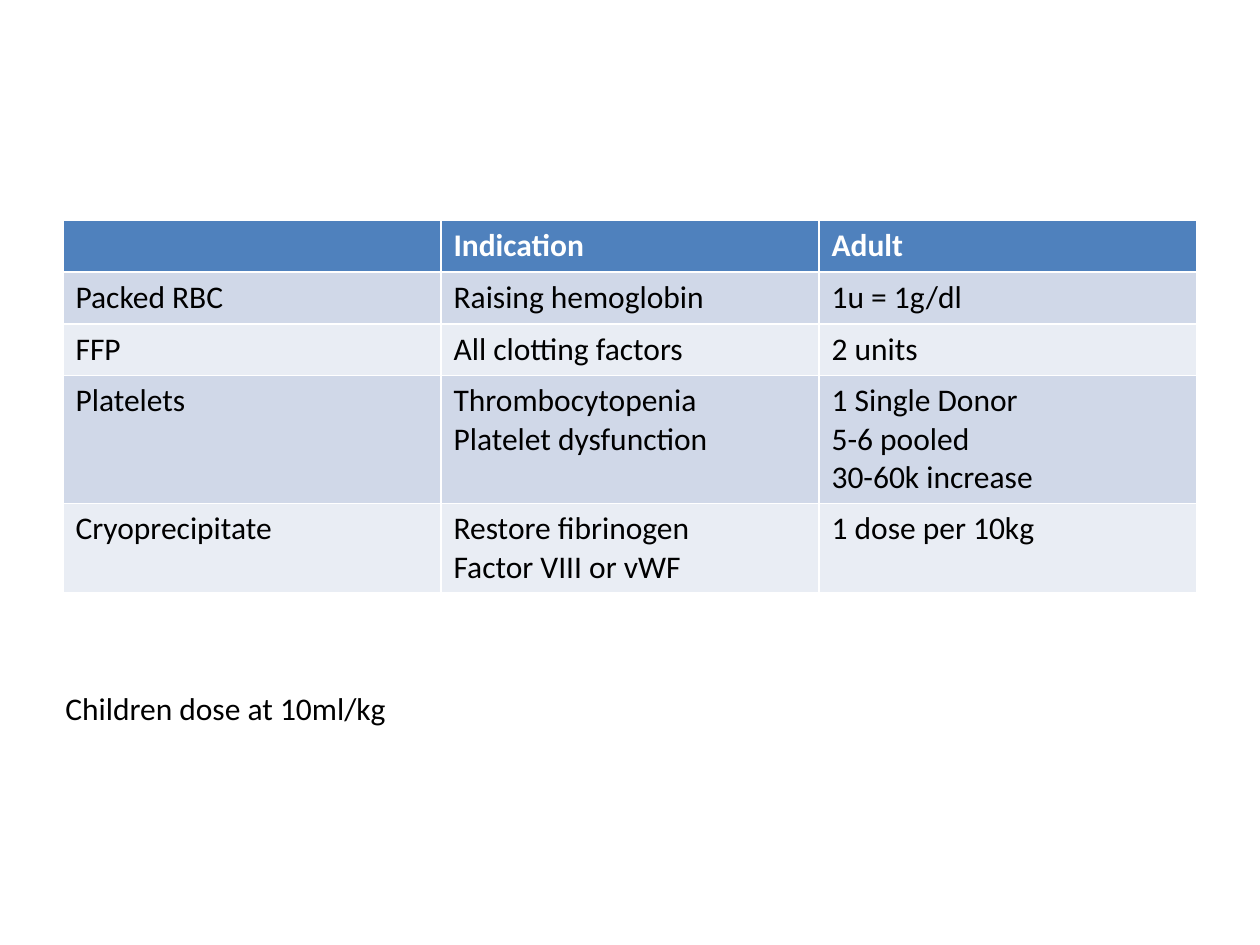
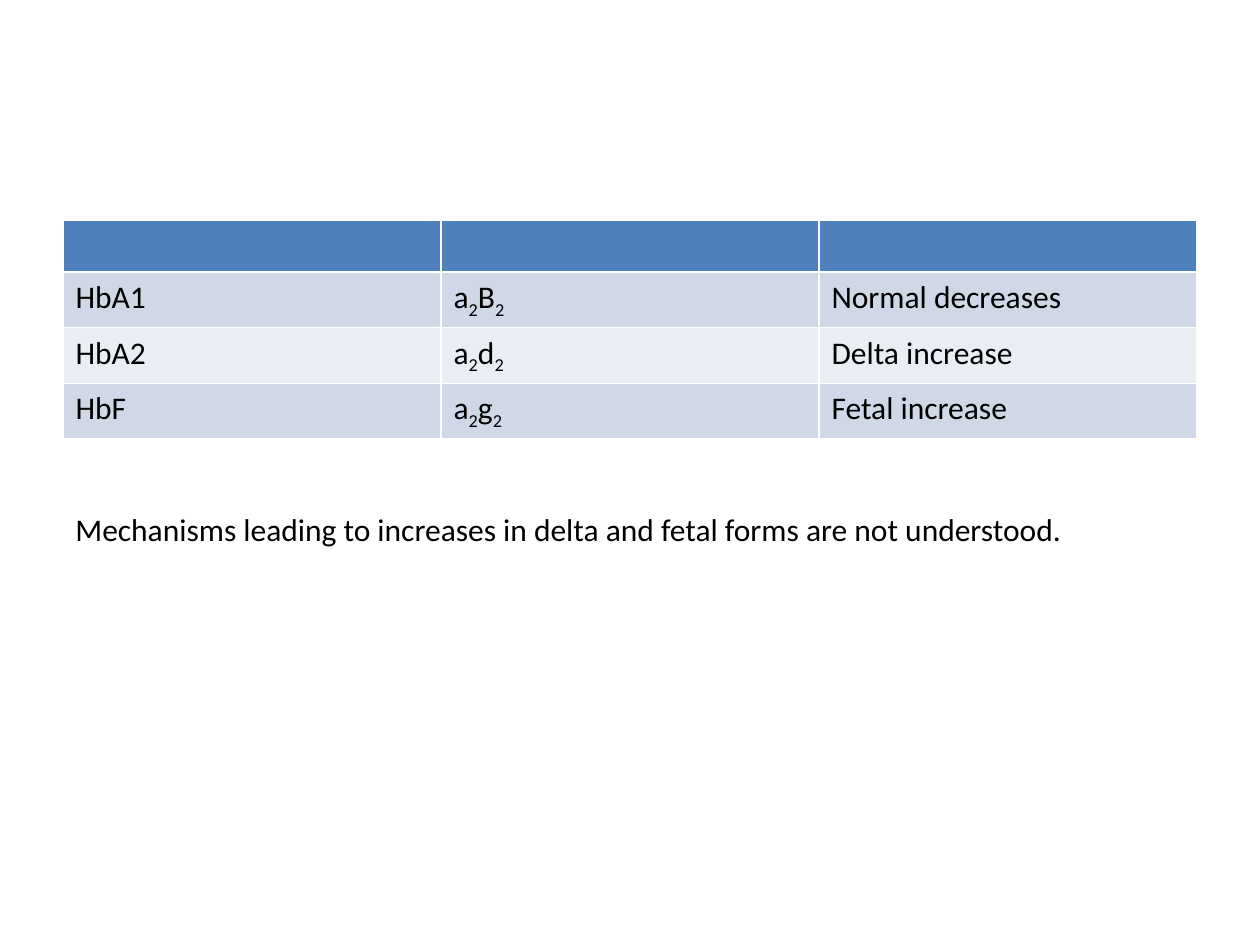
from pptx import Presentation
from pptx.dml.color import RGBColor
from pptx.enum.text import MSO_AUTO_SIZE
from pptx.util import Inches, Pt

GROW = MSO_AUTO_SIZE.SHAPE_TO_FIT_TEXT
FONT, SIZE = "Calibri", 18
WHITE, BLACK, HEAD = "FFFFFF", "000000", "4F81BD"
BANDS = ["E9EDF4", "D0D8E8"]
COL, ROW = 3, 0.41

# Each slide: table rows, note, note box, note wraps.
# A line break starts a paragraph; "_" lowers the next character.
PAGES = [
    ([["", "Indication", "Adult"],
      ["Packed RBC", "Raising hemoglobin", "1u = 1g/dl"],
      ["FFP", "All clotting factors", "2 units"],
      ["Platelets", "Thrombocytopenia\nPlatelet dysfunction",
       "1 Single Donor\n5-6 pooled\n30-60k increase"],
      ["Cryoprecipitate", "Restore fibrinogen\nFactor VIII or vWF",
       "1 dose per 10kg"]],
     "Children dose at 10ml/kg", (0.42, 5.42, 8.78, 0.4), True),
    ([["", "", ""],
      ["HbA1", "a_2B_2", "Normal decreases"],
      ["HbA2", "a_2d_2", "Delta increase"],
      ["HbF", "a_2g_2", "Fetal increase"]],
     "Mechanisms leading to increases in delta and fetal forms "
     "are not understood.", (0.5, 4, 8.06, 0.4), False),
]


def paint(target, color):
    target.rgb = RGBColor.from_string(color)


def write(frame, text, color, bold=False):
    for i, line in enumerate(text.split("\n")):
        para = frame.add_paragraph() if i else frame.paragraphs[0]
        para.font.name, para.font.size = FONT, Pt(SIZE)
        para.font.bold = bold
        paint(para.font.color, color)
        first, *rest = line.split("_")
        if first:
            para.add_run().text = first
        for part in rest:
            sub = para.add_run()
            sub.text = part[0]
            sub.font._element.set("baseline", "-25000")
            if part[1:]:
                para.add_run().text = part[1:]


prs = Presentation()
prs.slide_width, prs.slide_height = Inches(10), Inches(7.5)

for rows, note, box, wrap in PAGES:
    slide = prs.slides.add_slide(prs.slide_layouts[6])

    # Table with a header row and two band colours
    count = len(rows[0])
    grid = slide.shapes.add_table(
        len(rows), count, Inches(0.5), Inches(1.75),
        Inches(COL * count), Inches(ROW * len(rows))).table
    for r, row in enumerate(rows):
        for c, text in enumerate(row):
            cell = grid.cell(r, c)
            cell.fill.solid()
            paint(cell.fill.fore_color, BANDS[r % 2] if r else HEAD)
            write(cell.text_frame, text, BLACK if r else WHITE, r == 0)

    # Note below the table
    frame = slide.shapes.add_textbox(*map(Inches, box)).text_frame
    frame.word_wrap = wrap
    frame.auto_size = GROW
    write(frame, note, BLACK)

prs.save("out.pptx")
